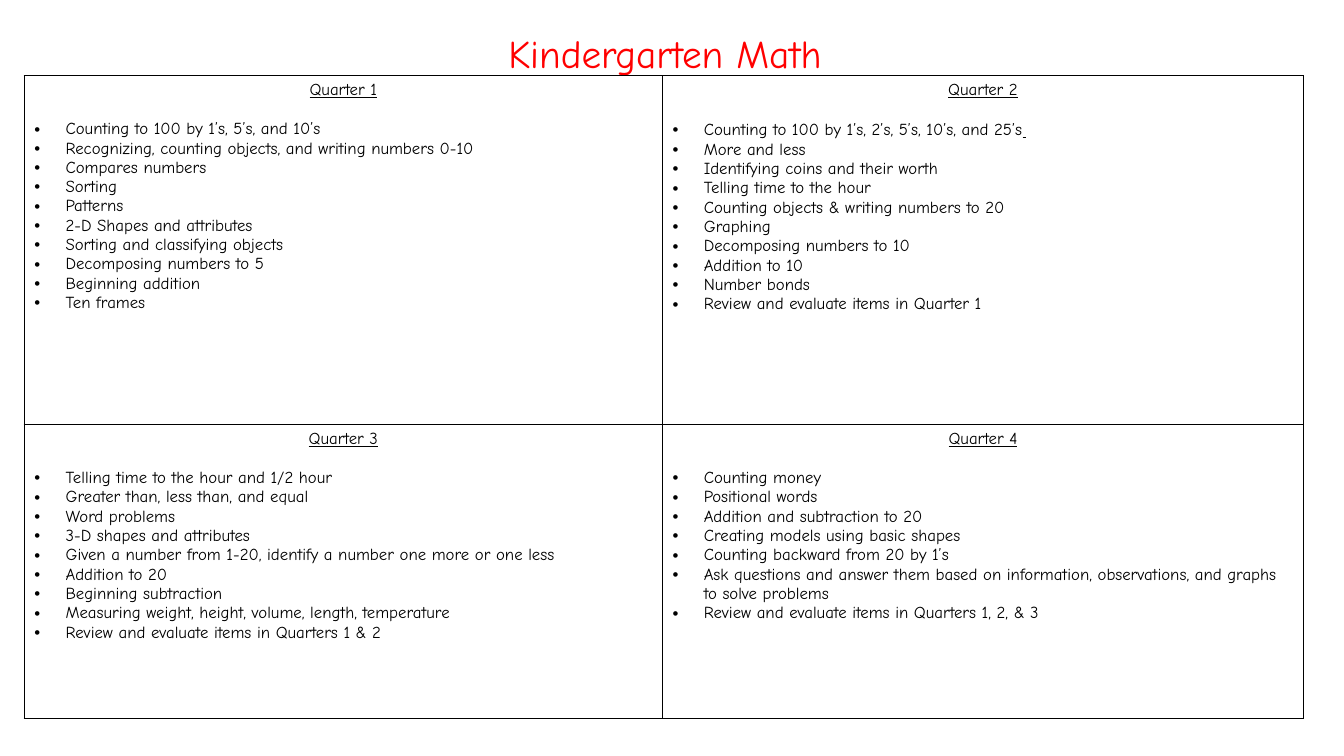
"""Build a one-slide kindergarten math overview by quarter."""
from lxml.etree import SubElement
from pptx import Presentation
from pptx.dml.color import RGBColor
from pptx.enum.text import MSO_ANCHOR, PP_ALIGN
from pptx.oxml.ns import qn
from pptx.util import Inches, Pt

TITLE = "Kindergarten Math "
QUARTERS = [
    ("Quarter 1", [
        "Counting to 100 by 1’s, 5’s, and 10’s",
        "Recognizing, counting objects, and writing numbers 0-10",
        "Compares numbers",
        "Sorting",
        "Patterns",
        "2-D Shapes and attributes",
        "Sorting and classifying objects",
        "Decomposing numbers to 5",
        "Beginning addition",
        "Ten frames",
    ]),
    ("Quarter 2", [
        "Counting to 100 by 1’s, 2’s, 5’s, 10’s, and 25’s ",
        "More and less",
        "Identifying coins and their worth",
        "Telling time to the hour",
        "Counting objects & writing numbers to 20",
        "Graphing",
        "Decomposing numbers to 10",
        "Addition to 10",
        "Number bonds",
        "Review and evaluate items in Quarter 1",
    ]),
    ("Quarter 3", [
        "Telling time to the hour and 1/2 hour",
        "Greater than, less than, and equal",
        "Word problems",
        "3-D shapes and attributes",
        "Given a number from 1-20, identify a number one more or one less",
        "Addition to 20",
        "Beginning subtraction",
        "Measuring weight, height, volume, length, temperature",
        "Review and evaluate items in Quarters 1 & 2",
    ]),
    ("Quarter 4", [
        "Counting money",
        "Positional words",
        "Addition and subtraction to 20",
        "Creating models using basic shapes",
        "Counting backward from 20 by 1’s",
        "Ask questions and answer them based on information, observations, "
        "and graphs to solve problems",
        "Review and evaluate items in Quarters 1, 2, & 3",
    ]),
]
COL_WIDTHS = [6.33, 6.36]
ROW_HEIGHTS = [3.46, 2.92]
FONT = "Comic Neue"
RED = RGBColor(0xFF, 0, 0)
BLACK = RGBColor(0, 0, 0)
WHITE = RGBColor(0xFF, 0xFF, 0xFF)


def style(p, size, color):
    p.font.name = FONT
    p.font.size = Pt(size)
    p.font.color.rgb = color


def add_borders(cell):
    tc_pr = cell._tc.get_or_add_tcPr()
    for side in ("lnL", "lnR", "lnT", "lnB"):
        ln = SubElement(tc_pr, qn(f"a:{side}"), w=str(Pt(1)))
        fill = SubElement(ln, qn("a:solidFill"))
        SubElement(fill, qn("a:srgbClr"), val=str(BLACK))


def add_bullet(p):
    p_pr = p._p.get_or_add_pPr()
    p_pr.set("marL", str(Inches(0.31)))
    p_pr.set("indent", str(Inches(-0.31)))
    bu_font = SubElement(p_pr, qn("a:buFont"), typeface="Arial")
    bu_font.addnext(SubElement(p_pr, qn("a:buChar"), char="•"))
    p_pr.append(p_pr.find(qn("a:defRPr")))


def fill_cell(cell, heading, topics):
    add_borders(cell)
    cell.fill.solid()
    cell.fill.fore_color.rgb = WHITE
    tf = cell.text_frame
    p = tf.paragraphs[0]
    p.text = heading
    p.alignment = PP_ALIGN.CENTER
    p.space_after = Pt(14)
    style(p, 12, BLACK)
    p.font.underline = True
    for topic in topics:
        p = tf.add_paragraph()
        r = p.add_run()
        r.text = topic.rstrip()
        style(p, 12, BLACK)
        add_bullet(p)
        if topic.endswith(" "):
            r = p.add_run()
            r.text = " "
            r.font.name = "Calibri"
            r.font.underline = True


def main():
    prs = Presentation()
    prs.slide_width, prs.slide_height = Inches(13.33), Inches(7.5)
    s = prs.slides.add_slide(prs.slide_layouts[5])

    title = s.shapes.title
    title.left, title.top = Inches(0.9), Inches(-0.25)
    title.width, title.height = Inches(11.52), Inches(1.6)
    tf = title.text_frame
    tf.vertical_anchor = MSO_ANCHOR.MIDDLE
    p = tf.paragraphs[0]
    p.text = TITLE
    p.alignment = PP_ALIGN.CENTER
    p.line_spacing = 0.9
    style(p, 28, RED)

    table = s.shapes.add_table(
        len(ROW_HEIGHTS), len(COL_WIDTHS), Inches(0.24), Inches(0.75),
        Inches(sum(COL_WIDTHS)), Inches(sum(ROW_HEIGHTS))).table
    table.first_row = table.horz_banding = False
    for column, width in zip(table.columns, COL_WIDTHS):
        column.width = Inches(width)
    for row, height in zip(table.rows, ROW_HEIGHTS):
        row.height = Inches(height)
    for cell, (heading, topics) in zip(table.iter_cells(), QUARTERS):
        fill_cell(cell, heading, topics)

    prs.save("out.pptx")


if __name__ == "__main__":
    main()
